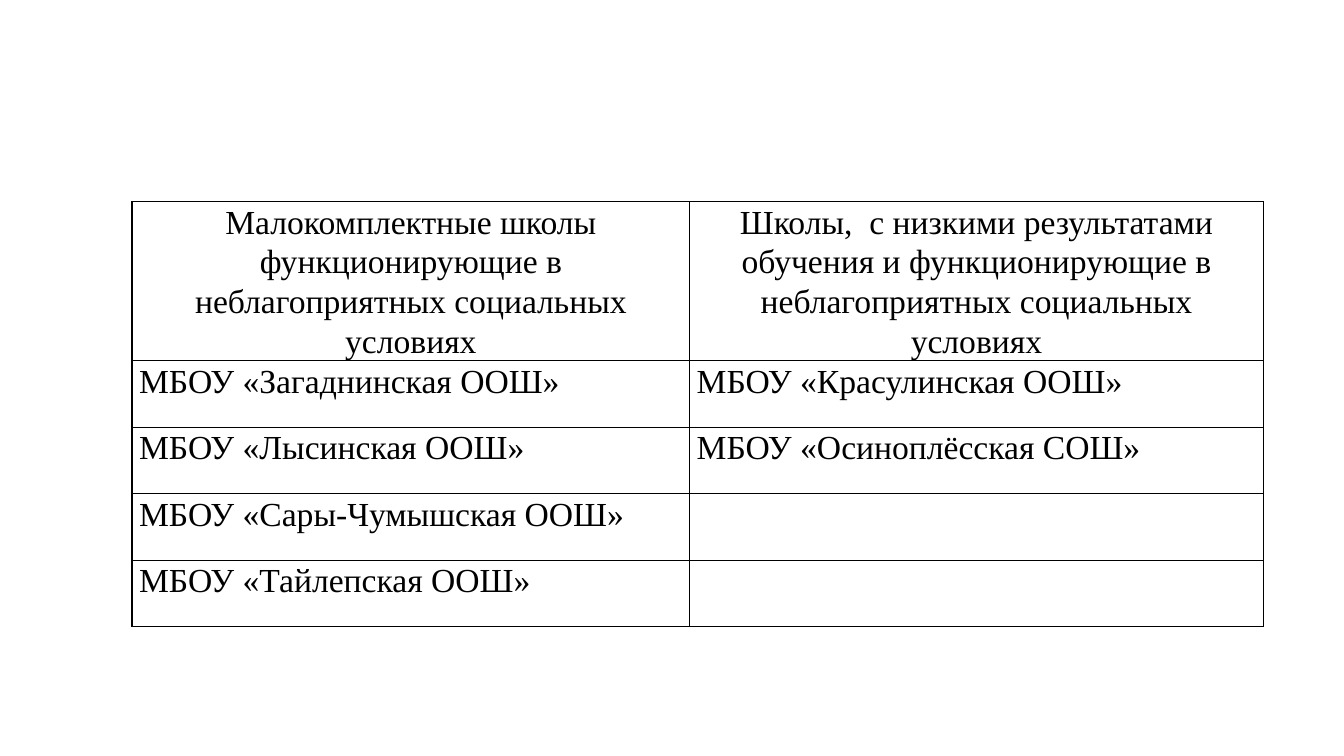
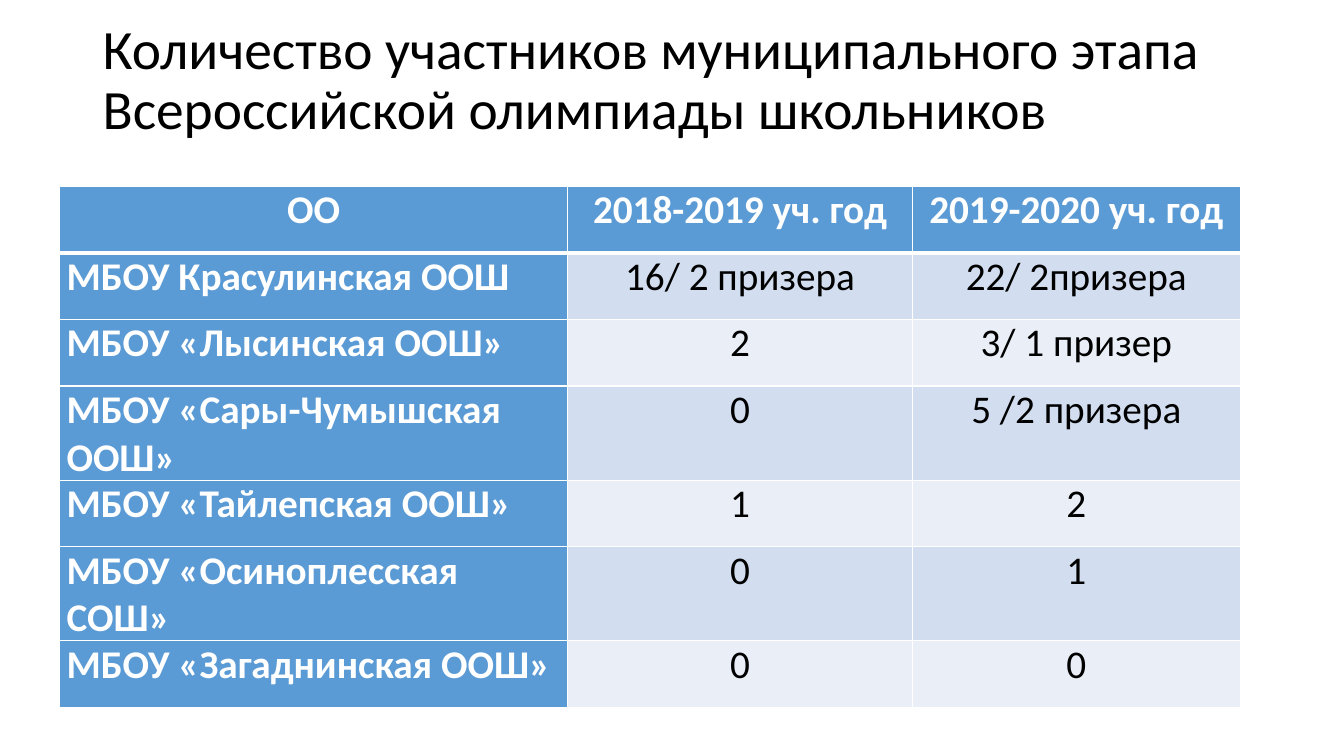
from dataclasses import dataclass

from lxml import etree
from pptx import Presentation
from pptx.dml.color import RGBColor
from pptx.enum import text
from pptx.oxml import ns
from pptx.slide import Slide
from pptx.table import _Cell
from pptx.text.text import _Paragraph
from pptx.util import Inches, Pt

BLACK = RGBColor(0x00, 0x00, 0x00)
WHITE = RGBColor(0xFF, 0xFF, 0xFF)
BLUE = RGBColor(0x5B, 0x9B, 0xD5)
BANDS = (RGBColor(0xD2, 0xDE, 0xEF), RGBColor(0xEA, 0xEF, 0xF7))
SERIF = "Times New Roman"
SANS = "Calibri"
ROW = 0.66
CENTER = text.PP_ALIGN.CENTER
LEFT = text.PP_ALIGN.LEFT


@dataclass(frozen=True)
class Grid:
    left: float
    top: float
    cols: tuple[float, ...]
    head: float
    rows: tuple[tuple[str, ...], ...]
    font: str
    size: float
    line: RGBColor
    spacing: float = 1.0
    banded: bool = False


SCHOOLS = Grid(
    1.31, 2, (5.53, 5.69), 1.58,
    (
        ("Малокомплектные школы функционирующие в неблагоприятных социальных условиях",
         "Школы,  с низкими результатами обучения и функционирующие в "
         "неблагоприятных социальных условиях"),
        ("МБОУ «Загаднинская ООШ»", "МБОУ «Красулинская ООШ»"),
        ("МБОУ «Лысинская ООШ»", "МБОУ «Осиноплёсская СОШ»"),
        ("МБОУ «Сары-Чумышская ООШ»", ""),
        ("МБОУ «Тайлепская ООШ»", ""),
    ),
    SERIF, 24, BLACK, spacing=1.07,
)

ENTRIES = Grid(
    0.59, 1.85, (5.04, 3.42, 3.25), ROW,
    (
        ("ОО", "2018-2019 уч. год", "2019-2020 уч. год"),
        ("МБОУ Красулинская ООШ", "16/ 2 призера", "22/ 2призера"),
        ("МБОУ «Лысинская ООШ»", "2", "3/ 1 призер"),
        ("МБОУ «Сары-Чумышская ООШ»", "0", "5 /2 призера"),
        ("МБОУ «Тайлепская ООШ»", "1", "2"),
        ("МБОУ «Осиноплесская СОШ»", "0", "1"),
        ("МБОУ «Загаднинская ООШ»", "0", "0"),
    ),
    SANS, 28, WHITE, banded=True,
)


def style(para: _Paragraph, font: str, size: float, color: RGBColor,
          bold: bool, spacing: float) -> None:
    para.line_spacing = spacing
    for run in para.runs:
        run.font.name = font
        run.font.size = Pt(size)
        run.font.color.rgb = color
        run.font.bold = bold


def edge(cell: _Cell, color: RGBColor, top: float, base: float) -> None:
    """Draw the four borders; top and base are widths in points."""
    props = cell._tc.get_or_add_tcPr()
    widths = {"a:lnL": 1, "a:lnR": 1, "a:lnT": top, "a:lnB": base}
    for spot, (tag, width) in enumerate(widths.items()):
        line = etree.Element(ns.qn(tag), w=str(Pt(width)))
        fill = etree.SubElement(line, ns.qn("a:solidFill"))
        etree.SubElement(fill, ns.qn("a:srgbClr"), val=str(color))
        props.insert(spot, line)


def add_grid(slide: Slide, grid: Grid) -> None:
    heights = [grid.head] + [ROW] * (len(grid.rows) - 1)
    frame = slide.shapes.add_table(
        len(grid.rows), len(grid.cols), Inches(grid.left), Inches(grid.top),
        Inches(sum(grid.cols)), Inches(sum(heights)))
    table = frame.table
    for col, width in zip(table.columns, grid.cols):
        col.width = Inches(width)
    for row, height in zip(table.rows, heights):
        row.height = Inches(height)
    for r, words in enumerate(grid.rows):
        for c, word in enumerate(words):
            cell = table.cell(r, c)
            cell.margin_left = cell.margin_right = Inches(0.07)
            cell.margin_top = cell.margin_bottom = 0
            strong = grid.banded and (r == 0 or c == 0)
            if grid.banded:
                cell.fill.solid()
                cell.fill.fore_color.rgb = BLUE if strong else BANDS[(r - 1) % 2]
            else:
                cell.fill.background()
            edge(cell, grid.line, 3 if grid.banded and r == 1 else 1,
                 3 if grid.banded and r == 0 else 1)
            cell.text_frame.text = word
            para = cell.text_frame.paragraphs[0]
            para.alignment = CENTER if r == 0 or (grid.banded and c) else LEFT
            style(para, grid.font, grid.size, WHITE if strong else BLACK,
                  strong, grid.spacing)


def add_title(slide: Slide, words: str) -> None:
    box = slide.shapes.add_textbox(Inches(0.92), Inches(0.17), Inches(11.5), Inches(1.3))
    box.text_frame.word_wrap = True
    box.text_frame.text = words
    style(box.text_frame.paragraphs[0], SANS, 39.6, BLACK, False, 0.9)


def main() -> None:
    deck = Presentation()
    deck.slide_width, deck.slide_height = Inches(13.33), Inches(7.5)
    blank = deck.slide_layouts[6]
    add_grid(deck.slides.add_slide(blank), SCHOOLS)
    slide = deck.slides.add_slide(blank)
    add_title(slide, "Количество участников муниципального этапа\v"
                     "Всероссийской олимпиады школьников")
    add_grid(slide, ENTRIES)
    deck.save("out.pptx")


if __name__ == "__main__":
    main()
